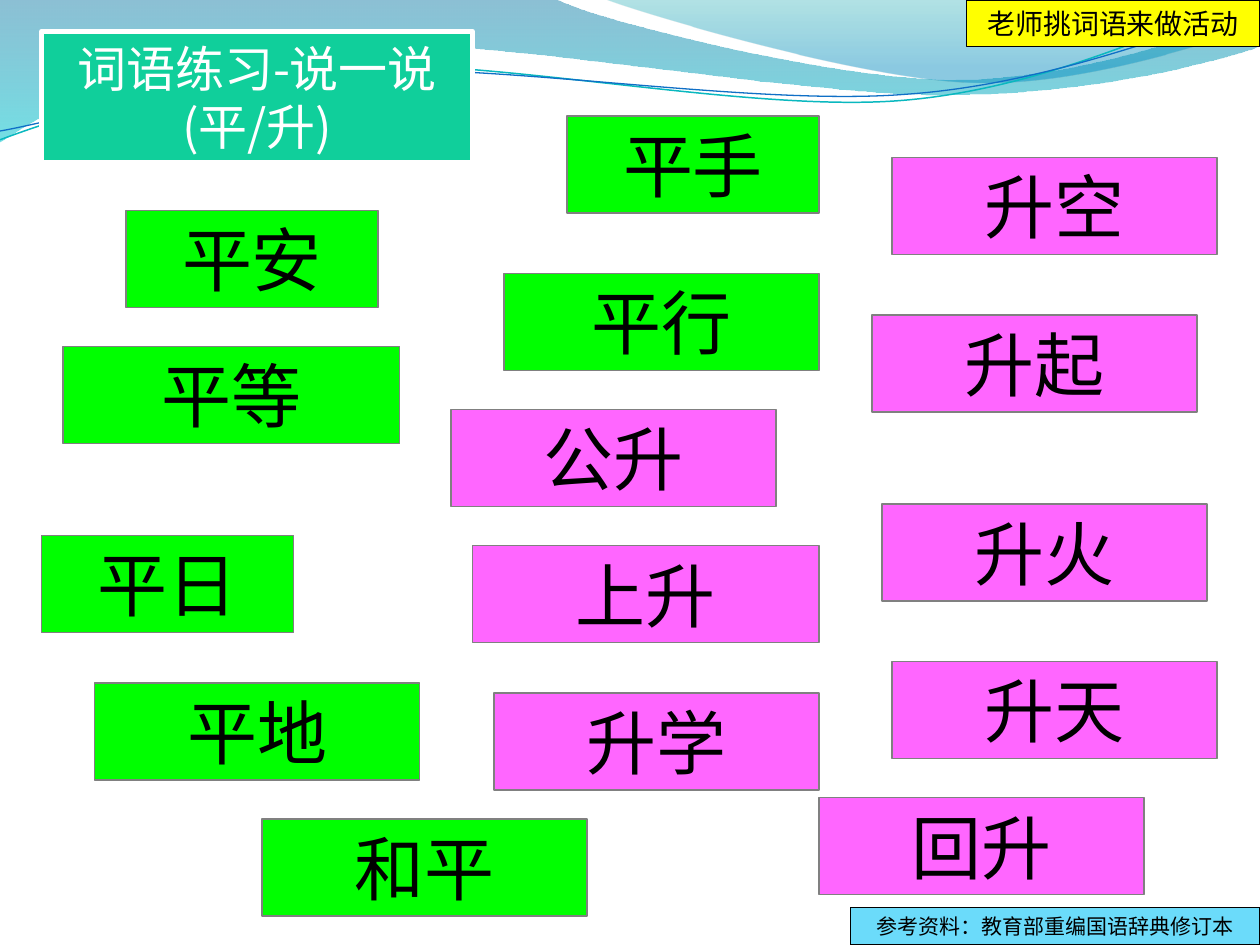
from dataclasses import dataclass

from lxml.etree import SubElement
from pptx import Presentation
from pptx.dml.color import RGBColor
from pptx.enum.shapes import MSO_SHAPE
from pptx.enum.text import MSO_ANCHOR, PP_ALIGN
from pptx.oxml.ns import qn
from pptx.util import Inches, Pt

FONT = "Noto Sans CJK SC"
COLORS = {
    "level": "00FF00", "rise": "FF66FF", "title": "10CF9B", "note": "FFFF00",
    "source": "6BDBFA", "black": "000000", "white": "FFFFFF", "grey": "808080",
    "deep": "0074A1", "aqua": "00C6CF", "teal": "00A1A9", "azure": "008BBF",
    "thread": "0AB8BF", "blue": "0F6FC6",
}
CARD_HEIGHT = 0.77


@dataclass
class Label:
    text: str
    left: float
    top: float
    width: float
    fill: str
    height: float = CARD_HEIGHT
    size: int = 40
    line: str = "grey"
    line_width: float = 0.75
    color: str = "black"


@dataclass
class Stop:
    position: float
    color: str
    alpha: int


@dataclass
class Wave:
    segments: list
    stops: tuple = ()
    line: str = ""
    line_width: float = 0


WAVES = [
    Wave([(0, 0), (4.4, -0.01),
          (4.76, 0.17, 6.64, 0.63, 7.58, 0.63), (8.53, 0.63, 9.58, 0.26, 10, 0.09),
          (10.01, 0.36),
          (9.83, 0.44, 8.7, 0.76, 7.46, 0.75), (6.22, 0.75, 3.82, 0.28, 2.57, 0.34),
          (1.29, 0.36, 0.46, 0.83, -0.01, 1.13)],
         stops=(Stop(0, "deep", 45), Stop(1, "aqua", 55))),
    Wave([(4.79, -0.01), (5.09, 0.11, 6.82, 0.62, 7.69, 0.65),
          (8.56, 0.69, 9.61, 0.32, 10, 0.21), (10, 0)],
         stops=(Stop(0, "teal", 30), Stop(0.8, "azure", 45))),
    Wave([(0, 1.11), (0.48, 0.93, 1.58, 0.57, 2.77, 0.52),
          (3.95, 0.47, 5.93, 0.89, 7.13, 0.8), (8.33, 0.71, 9.38, 0.15, 9.98, -0.02)],
         line="thread", line_width=0.85),
    Wave([(0, 1.04), (0.47, 0.96, 1.64, 0.61, 2.83, 0.56),
          (4.03, 0.51, 5.97, 0.84, 7.17, 0.75), (8.36, 0.67, 9.41, 0.21, 10, 0.06)],
         line="blue", line_width=0.75),
]

LABELS = [
    Label("平行", 4, 2.17, 2.5, "level"),
    Label("平日", 0.33, 4.25, 2, "level"),
    Label("平安", 1, 1.67, 2, "level"),
    Label("平等", 0.5, 2.75, 2.67, "level"),
    Label("上升", 3.75, 4.33, 2.75, "rise"),
    Label("平地", 0.75, 5.42, 2.58, "level"),
    Label("词语练习-说一说(平/升)", 0.33, 0.25, 3.42, "title", 1.04, 28, "white", 3, "white"),
    Label("回升", 6.5, 6.33, 2.58, "rise"),
    Label("和平", 2.08, 6.5, 2.58, "level"),
    Label("平手", 4.5, 0.92, 2, "level"),
    Label("升空", 7.08, 1.25, 2.58, "rise"),
    Label("升学", 3.92, 5.5, 2.58, "rise"),
    Label("公升", 3.58, 3.25, 2.58, "rise"),
    Label("升火", 7, 4, 2.58, "rise"),
    Label("升起", 6.92, 2.5, 2.58, "rise"),
    Label("升天", 7.08, 5.25, 2.58, "rise"),
    Label("老师挑词语来做活动", 7.67, 0, 2.33, "note", 0.37, 16, "black"),
    Label("参考资料：教育部重编国语辞典修订本", 6.75, 7.2, 3.25, "source", 0.3, 12, "black"),
]


def rgb(name: str) -> RGBColor:
    return RGBColor.from_string(COLORS[name])


def bend_lines(shape, segments: list) -> None:
    left = min(segment[-2] for segment in segments)
    top = min(segment[-1] for segment in segments)
    lines = list(shape._element.spPr.iter(qn("a:lnTo")))
    for line, segment in zip(lines, segments[1:]):
        if len(segment) == 2:
            continue
        line.tag = qn("a:cubicBezTo")
        for child in list(line):
            line.remove(child)
        for x, y in zip(segment[::2], segment[1::2]):
            SubElement(line, qn("a:pt"), x=str(Inches(x - left)), y=str(Inches(y - top)))


def draw_wave(page, wave: Wave) -> None:
    anchors = [(Inches(segment[-2]), Inches(segment[-1])) for segment in wave.segments]
    builder = page.shapes.build_freeform(*anchors[0])
    builder.add_line_segments(anchors[1:], close=bool(wave.stops))
    shape = builder.convert_to_shape()
    bend_lines(shape, wave.segments)
    shape.shadow.inherit = False
    if not wave.stops:
        shape.fill.background()
        shape.line.color.rgb = rgb(wave.line)
        shape.line.width = Pt(wave.line_width)
        return
    shape.line.fill.background()
    shape.fill.gradient()
    shape.fill.gradient_angle = 270
    for gradient_stop, stop in zip(shape.fill.gradient_stops, wave.stops):
        gradient_stop.position = stop.position
        gradient_stop.color.rgb = rgb(stop.color)
    for color, stop in zip(shape._element.spPr.iter(qn("a:srgbClr")), wave.stops):
        SubElement(color, qn("a:alpha"), val=str(stop.alpha * 1000))


def draw_label(page, label: Label) -> None:
    box = page.shapes.add_shape(
        MSO_SHAPE.RECTANGLE, Inches(label.left), Inches(label.top),
        Inches(label.width), Inches(label.height))
    box.shadow.inherit = False
    box.fill.solid()
    box.fill.fore_color.rgb = rgb(label.fill)
    box.line.color.rgb = rgb(label.line)
    box.line.width = Pt(label.line_width)
    frame = box.text_frame
    frame.word_wrap = True
    frame.vertical_anchor = MSO_ANCHOR.MIDDLE
    para = frame.paragraphs[0]
    para.text = label.text
    para.alignment = PP_ALIGN.CENTER
    para.font.size = Pt(label.size)
    para.font.name = FONT
    para.font.color.rgb = rgb(label.color)
    SubElement(para.font._element, qn("a:ea"), typeface=FONT)


def main() -> None:
    deck = Presentation()
    deck.slide_width, deck.slide_height = Inches(10), Inches(7.5)
    page = deck.slides.add_slide(deck.slide_layouts[6])
    for wave in WAVES:
        draw_wave(page, wave)
    for label in LABELS:
        draw_label(page, label)
    deck.save("out.pptx")


if __name__ == "__main__":
    main()
